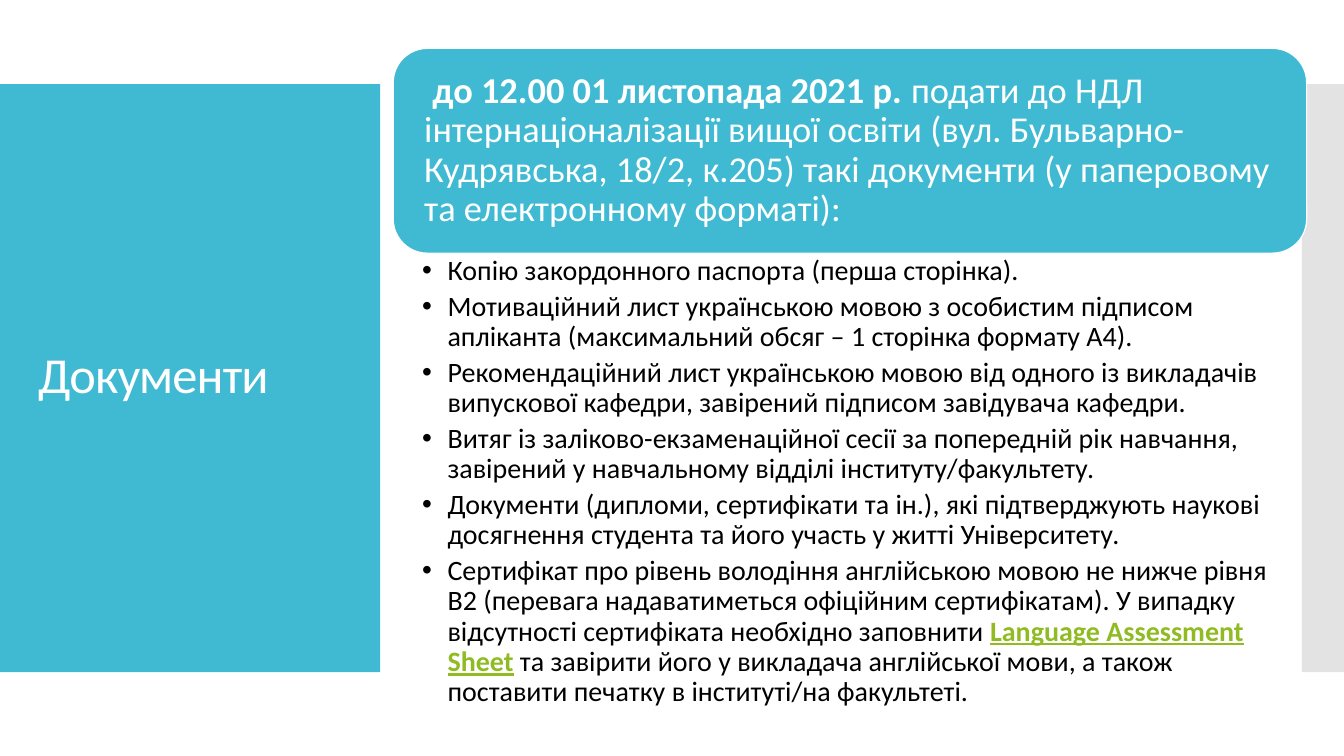
from lxml import etree
from pptx import Presentation
from pptx.dml.color import RGBColor
from pptx.enum.shapes import MSO_SHAPE
from pptx.enum.text import MSO_ANCHOR, PP_ALIGN
from pptx.oxml.ns import qn
from pptx.util import Cm, Pt

RECT = MSO_SHAPE.RECTANGLE
ROUNDED = MSO_SHAPE.ROUNDED_RECTANGLE
TOP = MSO_ANCHOR.TOP
MIDDLE = MSO_ANCHOR.MIDDLE
LEFT = PP_ALIGN.LEFT

FONT = "Calibri"
COLORS = {
    "accent": "40BAD2",
    "side": "C8C8C8",
    "white": "FFFFFF",
    "black": "000000",
    "link": "90BB23",
}
BAND_TOP, BAND_HEIGHT = 2.12, 14.82
CONTENT_LEFT, CONTENT_WIDTH = 9.91, 23.02

HEADING = [
    (" ", False),
    ("до 12.00 01 листопада 2021 р.", True),
    (" подати до НДЛ інтернаціоналізації вищої освіти (вул. Бульварно-Кудрявська, 18/2, к.205) "
     "такі документи (у паперовому та електронному форматі):", False),
]
DOCUMENTS = [
    "Копію закордонного паспорта (перша сторінка).",
    "Мотиваційний лист українською мовою з особистим підписом апліканта "
    "(максимальний обсяг – 1 сторінка формату А4).",
    "Рекомендаційний лист українською мовою від одного із викладачів випускової кафедри, "
    "завірений підписом завідувача кафедри.",
    "Витяг із заліково-екзаменаційної сесії за попередній рік навчання, "
    "завірений у навчальному відділі інституту/факультету.",
    "Документи (дипломи, сертифікати та ін.), які підтверджують наукові досягнення студента "
    "та його участь у житті Університету.",
]
CERTIFICATE = [
    "Сертифікат про рівень володіння англійською мовою не нижче рівня В2 (перевага надаватиметься "
    "офіційним сертифікатам). У випадку відсутності сертифіката необхідно заповнити ",
    "Language Assessment Sheet",
    " та завірити його у викладача англійської мови, а також поставити печатку "
    "в інституті/на факультеті.",
]


def rgb(name):
    return RGBColor.from_string(COLORS[name])


def add_block(slide, kind, left, top, width, height, fill, line=None, alpha=None):
    sp = slide.shapes.add_shape(kind, Cm(left), Cm(top), Cm(width), Cm(height))
    sp.shadow.inherit = False
    sp.fill.solid()
    sp.fill.fore_color.rgb = rgb(fill)
    if alpha:
        color = sp.fill._xPr.find(qn("a:solidFill"))[0]
        etree.SubElement(color, qn("a:alpha")).set("val", str(alpha * 1000))
    if line:
        sp.line.color.rgb = rgb(line)
        sp.line.width = Pt(0.85)
    else:
        sp.line.fill.background()
    return sp


def add_textbox(slide, left, top, width, height):
    return slide.shapes.add_textbox(Cm(left), Cm(top), Cm(width), Cm(height))


def set_frame(sp, anchor, left, top, right, bottom):
    tf = sp.text_frame
    tf.word_wrap = True
    tf.vertical_anchor = anchor
    tf.margin_left, tf.margin_top = Cm(left), Cm(top)
    tf.margin_right, tf.margin_bottom = Cm(right), Cm(bottom)
    return tf


def format_paragraph(p, after=0):
    p.alignment = LEFT
    p.line_spacing = 0.9
    p.space_after = Pt(after)


def add_run(p, text, size, color, bold=False, underline=False):
    r = p.add_run()
    r.text = text
    r.font.name = FONT
    r.font.size = Pt(size)
    r.font.bold = bold
    r.font.underline = underline
    r.font.color.rgb = rgb(color)
    return r


def add_bullet(p):
    pPr = p._p.get_or_add_pPr()
    pPr.set("marL", str(Cm(0.64)))
    pPr.set("indent", str(Cm(-0.64)))
    etree.SubElement(pPr, qn("a:buFont")).set("typeface", "Arial")
    etree.SubElement(pPr, qn("a:buChar")).set("char", "•")


def add_title(slide):
    sp = add_textbox(slide, 0.71, 3.12, 8.18, 12.78)
    p = set_frame(sp, MIDDLE, 0.25, 0.13, 0.25, 0.13).paragraphs[0]
    format_paragraph(p)
    r = add_run(p, "Документи", 36, "white")
    r.font._element.set("spc", "-60")


def add_heading(slide):
    sp = add_block(slide, ROUNDED, CONTENT_LEFT, 1.22, CONTENT_WIDTH, 5.16, "accent", "white")
    p = set_frame(sp, MIDDLE, 0.53, 0.53, 0.53, 0.53).paragraphs[0]
    format_paragraph(p)
    for text, bold in HEADING:
        add_run(p, text, 26, "white", bold)


def add_documents(slide):
    sp = add_textbox(slide, CONTENT_LEFT, 6.36, CONTENT_WIDTH, 11.96)
    tf = set_frame(sp, TOP, 0.73, 0.1, 0.51, 0.1)
    for i, texts in enumerate([[text] for text in DOCUMENTS] + [CERTIFICATE]):
        p = tf.add_paragraph() if i else tf.paragraphs[0]
        format_paragraph(p, after=4)
        add_bullet(p)
        for j, text in enumerate(texts):
            is_link = j == 1
            add_run(p, text, 20, "link" if is_link else "black", is_link, is_link)


def main():
    prs = Presentation()
    prs.slide_width, prs.slide_height = Cm(33.87), Cm(19.05)
    slide = prs.slides.add_slide(prs.slide_layouts[6])
    add_block(slide, RECT, 0, BAND_TOP, 9.58, BAND_HEIGHT, "accent")
    add_block(slide, RECT, 32.81, BAND_TOP, 1.06, BAND_HEIGHT, "side", alpha=50)
    add_title(slide)
    add_heading(slide)
    add_documents(slide)
    prs.save("out.pptx")


if __name__ == "__main__":
    main()
